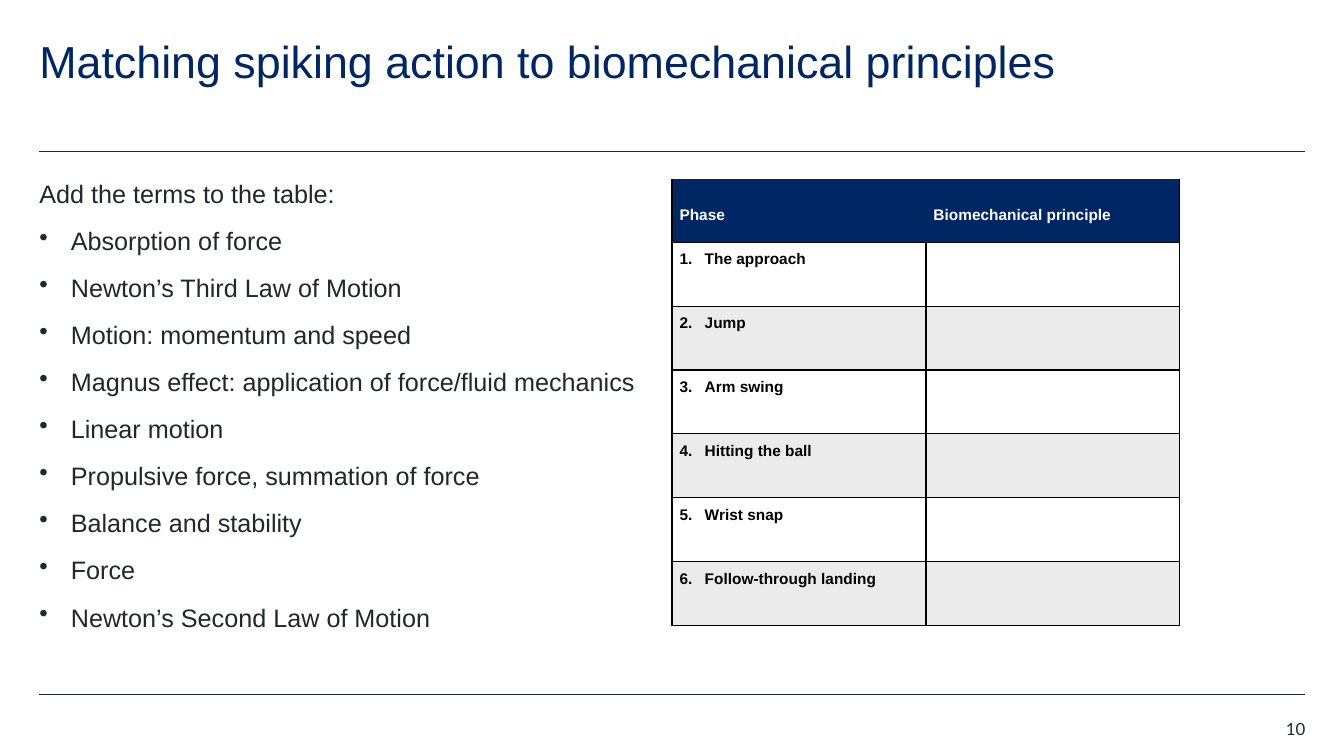
from dataclasses import dataclass

from lxml import etree
from pptx import Presentation
from pptx import util as u
from pptx.dml import color
from pptx.enum import shapes, text
from pptx.oxml import ns

HUES = {"ink": "22272B", "navy": "002664", "white": "FFFFFF", "black": "000000", "band": "EBEBEB"}
LEFT, RIGHT = 28.1, 932.4


@dataclass
class Box:
    x: float
    y: float
    w: float
    h: float


@dataclass
class Mark:
    tag: str
    attrs: dict[str, str]
    indent: float


def rgb(hue: str) -> color.RGBColor:
    return color.RGBColor.from_string(HUES[hue])


def write(para, words: str, size: float, hue: str = "ink", font: str = "Arial",
          bold: bool = False, align=text.PP_ALIGN.LEFT, line: float = 1.0,
          after: float = 0, mark: Mark | None = None) -> None:
    para.alignment = align
    para.line_spacing = line
    para.space_after = u.Pt(after)
    if mark:
        props = para._p.get_or_add_pPr()
        props.set("marL", str(u.Pt(mark.indent)))
        props.set("indent", str(-u.Pt(mark.indent)))
        etree.SubElement(props, ns.qn(mark.tag), mark.attrs)
    run = para.add_run()
    run.text = words
    run.font.name = font
    run.font.size = u.Pt(size)
    run.font.bold = bold
    run.font.color.rgb = rgb(hue)


def frame(slide, box: Box):
    body = slide.shapes.add_textbox(u.Pt(box.x), u.Pt(box.y), u.Pt(box.w), u.Pt(box.h)).text_frame
    body.word_wrap = True
    body.margin_left = body.margin_right = body.margin_top = body.margin_bottom = 0
    return body


def rule(slide, y: float) -> None:
    line = slide.shapes.add_connector(
        shapes.MSO_CONNECTOR.STRAIGHT, u.Pt(LEFT), u.Pt(y), u.Pt(RIGHT), u.Pt(y))
    line.line.color.rgb = rgb("ink")
    line.line.width = u.Pt(0.5)
    etree.SubElement(line._element.spPr, ns.qn("a:effectLst"))


def style(cell, hue: str, sides: str) -> None:
    props = cell._tc.get_or_add_tcPr()
    for side in "LRTB":
        edge = etree.SubElement(props, ns.qn(f"a:ln{side}"), {"w": str(u.Pt(1))})
        if side in sides:
            fill = etree.SubElement(edge, ns.qn("a:solidFill"))
            etree.SubElement(fill, ns.qn("a:srgbClr"), {"val": HUES["black"]})
        else:
            etree.SubElement(edge, ns.qn("a:noFill"))
    cell.fill.solid()
    cell.fill.fore_color.rgb = rgb(hue)
    cell.margin_left = cell.margin_right = u.Pt(5.4)
    cell.margin_top = cell.margin_bottom = 0


def grid(slide, box: Box, heads: list[str], phases: list[str]) -> None:
    rows = len(phases) + 1
    table = slide.shapes.add_table(
        rows, len(heads), u.Pt(box.x), u.Pt(box.y), u.Pt(box.w), u.Pt(box.h)).table
    table.first_row = table.horz_banding = False
    for row in table.rows:
        row.height = u.Pt(box.h / rows)
    for col, (head, sides) in enumerate(zip(heads, ("LB", "RB"))):
        cell = table.cell(0, col)
        style(cell, "navy", sides)
        cell.vertical_anchor = text.MSO_ANCHOR.MIDDLE
        write(cell.text_frame.paragraphs[0], head, 11, "white", bold=True, line=1.5, after=6)
    for row, phase in enumerate(phases, 1):
        for col in range(len(heads)):
            style(table.cell(row, col), "white" if row % 2 else "band", "LRTB")
        mark = Mark("a:buAutoNum", {"type": "arabicPeriod", "startAt": str(row)}, 18)
        write(table.cell(row, 0).text_frame.paragraphs[0], phase, 11, "black",
              bold=True, line=1.5, after=6, mark=mark)


def main() -> None:
    deck = Presentation()
    deck.slide_width, deck.slide_height = u.Pt(960), u.Pt(540)
    slide = deck.slides.add_slide(deck.slide_layouts[6])

    for y in (108, 496.1):
        rule(slide, y)

    title = frame(slide, Box(LEFT, 28.1, 793.4, 43.2))
    write(title.paragraphs[0], "Matching spiking action to biomechanical principles",
          32, "navy", line=0.9)

    terms = [
        "Absorption of force",
        "Newton’s Third Law of Motion",
        "Motion: momentum and speed",
        "Magnus effect: application of force/fluid mechanics",
        "Linear motion",
        "Propulsive force, summation of force",
        "Balance and stability",
        "Force",
        "Newton’s Second Law of Motion",
    ]
    body = frame(slide, Box(LEFT, 127.6, 437.8, 357.1))
    write(body.paragraphs[0], "Add the terms to the table:", 18, after=12)
    dot = Mark("a:buChar", {"char": "•"}, 22.5)
    for term in terms:
        write(body.add_paragraph(), term, 18, after=12, mark=dot)

    phases = ["The approach", "Jump", "Arm swing", "Hitting the ball",
              "Wrist snap", "Follow-through landing"]
    grid(slide, Box(480, 127.6, 362.8, 319.2), ["Phase", "Biomechanical principle"], phases)

    page = frame(slide, Box(876, 513.4, 56.4, 14.4))
    write(page.paragraphs[0], "10", 12, font="Lato", align=text.PP_ALIGN.RIGHT)

    deck.save("out.pptx")


if __name__ == "__main__":
    main()
